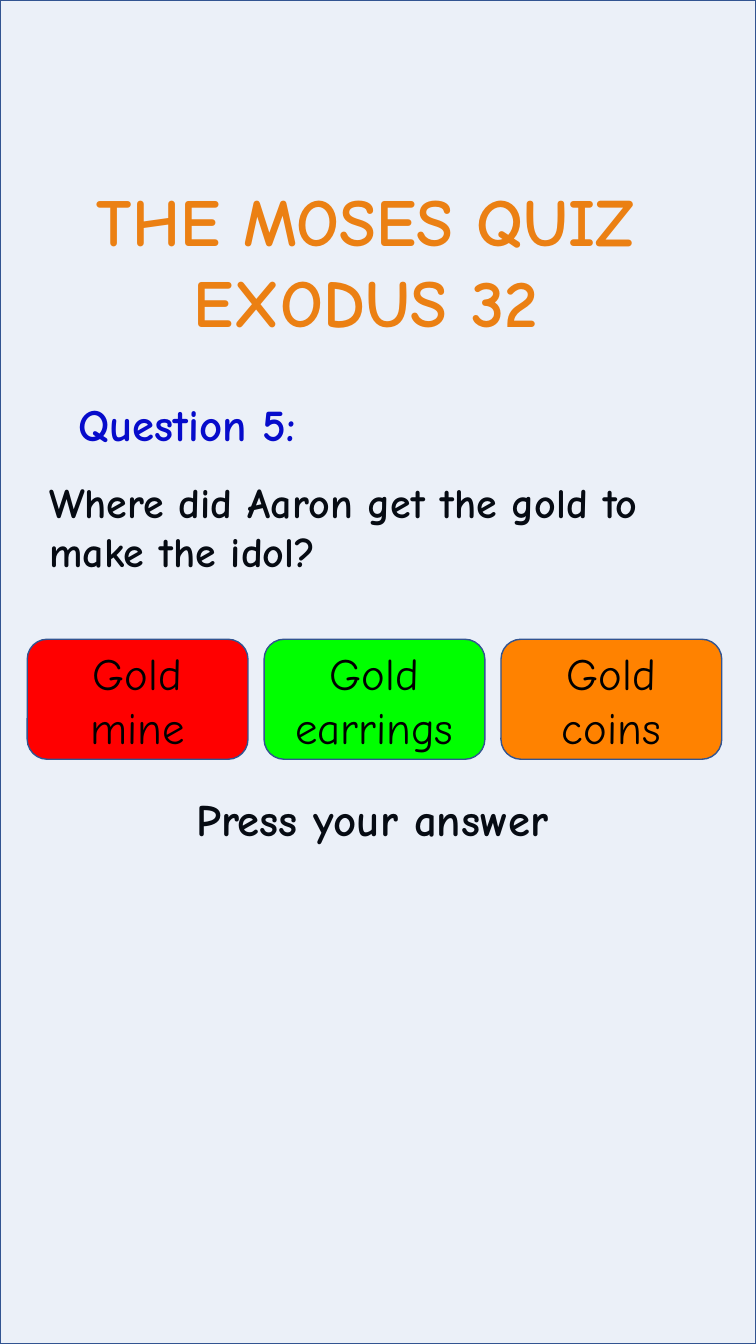
from lxml import etree
from pptx import Presentation
from pptx.dml.color import RGBColor
from pptx.enum.shapes import MSO_SHAPE
from pptx.enum.text import MSO_ANCHOR, PP_ALIGN
from pptx.oxml.ns import qn
from pptx.util import Inches, Pt

RECTANGLE = MSO_SHAPE.RECTANGLE
ROUNDED = MSO_SHAPE.ROUNDED_RECTANGLE
MIDDLE = MSO_ANCHOR.MIDDLE
LEFT, CENTER = PP_ALIGN.LEFT, PP_ALIGN.CENTER

FONT = "Comic Neue"
COLORS = {
    "title": "FF8200",
    "question": "0000CC",
    "text": "000000",
    "tint": "4472C4",
    "outline": "325491",
    "red": "FF0000",
    "green": "00FF00",
    "orange": "FF8200",
}
ANSWERS = [("Gold mine", "red"), ("Gold earrings", "green"), ("Gold coins", "orange")]


def color(name):
    """Return the named palette colour."""
    return RGBColor.from_string(COLORS[name])


def write_lines(frame, lines, size, color_name, bold=True, align=LEFT):
    """Fill a text frame with one paragraph per line and return the paragraphs."""
    for index, line in enumerate(lines):
        paragraph = frame.add_paragraph() if index else frame.paragraphs[0]
        paragraph.text = line
        paragraph.alignment = align
        paragraph.font.name = FONT
        paragraph.font.size = Pt(size)
        paragraph.font.bold = bold
        paragraph.font.color.rgb = color(color_name)
    return frame.paragraphs


def add_text(slide, box, lines, size, color_name, align=LEFT, wrap=True):
    """Add a text box in the given box and return its paragraphs."""
    frame = slide.shapes.add_textbox(*map(Inches, box)).text_frame
    frame.word_wrap = wrap
    return write_lines(frame, lines, size, color_name, align=align)


def add_panel(slide, kind, box, fill_name):
    """Add a filled, outlined shape in the given box."""
    shape = slide.shapes.add_shape(kind, *map(Inches, box))
    shape.shadow.inherit = False
    shape.fill.solid()
    shape.fill.fore_color.rgb = color(fill_name)
    shape.line.color.rgb = color("outline")
    shape.line.width = Pt(1)
    return shape


def add_heading(slide, box):
    """Add the quiz title and the question number below it."""
    left, top, width, height = box
    add_text(slide, box, ["THE MOSES QUIZ ", "EXODUS 32 "], 48, "title", CENTER, False)
    number_box = (left + 0.17, top + height + 0.44, 2.77, 0.64)
    add_text(slide, number_box, ["Question 5:"], 32, "question", CENTER, False)


def add_question(slide, box):
    """Add the question and the prompt to answer it."""
    left, top, width, height = box
    question = add_text(
        slide, box, ["Where did Aaron get the gold to make the idol?"], 30, "text")[0]
    question.line_spacing = Pt(35)
    prompt_box = (left + 1.46, top + 3.17, 4.22, 0.72)
    prompt = add_text(slide, prompt_box, ["Press your answer"], 32, "text")[0]
    prompt.line_spacing = 0.9
    for paragraph in (question, prompt):
        paragraph.space_before = Pt(7.5)


def add_tint(slide, box):
    """Cover the box with a ten percent blue tint."""
    tint = add_panel(slide, RECTANGLE, box, "tint")
    fill_color = tint._element.spPr.find(qn("a:solidFill"))[0]
    etree.SubElement(fill_color, qn("a:alpha")).set("val", "10000")


def add_answers(slide, box, gap=0.16):
    """Spread the answer buttons evenly across the box."""
    left, top, width, height = box
    button_width = (width - gap * (len(ANSWERS) - 1)) / len(ANSWERS)
    for index, (answer, fill_name) in enumerate(ANSWERS):
        button_left = left + index * (button_width + gap)
        button = add_panel(
            slide, ROUNDED, (button_left, top, button_width, height), fill_name)
        button.text_frame.word_wrap = True
        button.text_frame.vertical_anchor = MIDDLE
        write_lines(button.text_frame, [answer], 32, "text", False, CENTER)


def main():
    """Build the quiz slide and save it."""
    presentation = Presentation()
    presentation.slide_width = Inches(7.5)
    presentation.slide_height = Inches(13.33)
    slide = presentation.slides.add_slide(presentation.slide_layouts[6])
    add_heading(slide, (0.3, 1.73, 6.89, 1.72))
    add_question(slide, (0.39, 4.69, 6.92, 1.46))
    add_tint(slide, (0, 0, 7.5, 13.33))
    add_answers(slide, (0.27, 6.34, 6.89, 1.19))
    presentation.save("out.pptx")


if __name__ == "__main__":
    main()
